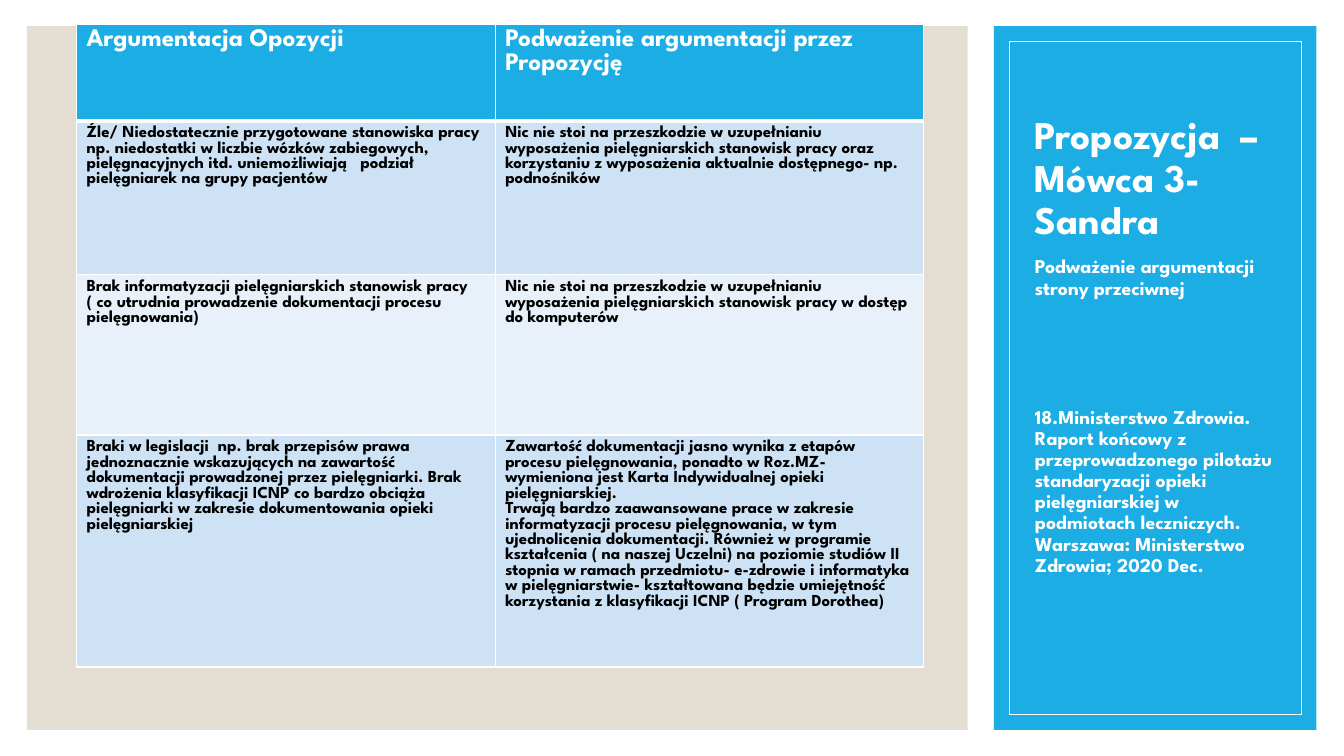
from pptx import Presentation
from pptx.dml.color import RGBColor
from pptx.enum import shapes, text
from pptx.oxml import parse_xml
from pptx.oxml import ns
from pptx.util import Pt


def tint(code):
    return RGBColor.from_string(code)


class Board:
    font = "League Spartan"
    white = "FFFFFF"
    blue = "1CADE4"
    sand = "E3DED1"
    bands = ("CDE3F5", "E8F1FA")

    def __init__(self, deck):
        self.slide = deck.slides.add_slide(deck.slide_layouts[6])

    def style(self, frame, size, color):
        for para in frame.paragraphs:
            for run in para.runs:
                run.font.name = self.font
                run.font.size = Pt(size)
                run.font.bold = True
                run.font.color.rgb = tint(color)

    def panel(self, box, fill=None, line=None):
        shape = self.slide.shapes.add_shape(
            shapes.MSO_SHAPE.RECTANGLE, *map(Pt, box))
        shape.shadow.inherit = False
        if fill:
            shape.fill.solid()
            shape.fill.fore_color.rgb = tint(fill)
        else:
            shape.fill.background()
        if line:
            shape.line.color.rgb = tint(line)
            shape.line.width = Pt(0.5)
        else:
            shape.line.fill.background()

    def label(self, box, words, size, anchor, gap=0):
        frame = self.slide.shapes.add_textbox(*map(Pt, box)).text_frame
        frame.word_wrap = True
        frame.vertical_anchor = anchor
        frame.text = words
        for para in frame.paragraphs:
            para.line_spacing = 0.9
        frame.paragraphs[-1].space_before = Pt(gap)
        self.style(frame, size, self.white)

    def edge(self, cell, side, width):
        line = parse_xml(
            f'<a:{side} {ns.nsdecls("a")} w="{Pt(width)}"><a:solidFill>'
            f'<a:srgbClr val="{self.white}"/></a:solidFill></a:{side}>')
        cell._tc.get_or_add_tcPr().append(line)

    def table(self, spot, widths, heights, rows):
        grid = self.slide.shapes.add_table(
            len(rows), len(widths), *map(Pt, spot),
            Pt(sum(widths)), Pt(sum(heights))).table
        for col, width in zip(grid.columns, widths):
            col.width = Pt(width)
        for i, (row, height) in enumerate(zip(rows, heights)):
            grid.rows[i].height = Pt(height)
            for j, words in enumerate(row):
                self.cell(grid.cell(i, j), words, i)

    def cell(self, cell, words, row):
        cell.text_frame.text = words
        self.style(cell.text_frame, 12 if row else 18,
                   "000000" if row else self.white)
        for side in ("lnL", "lnR", "lnT", "lnB"):
            thick = (row, side) in ((0, "lnB"), (1, "lnT"))
            self.edge(cell, side, 3 if thick else 1)
        cell.fill.solid()
        cell.fill.fore_color.rgb = tint(
            self.bands[(row - 1) % 2] if row else self.blue)


ROWS = [
    ("Argumentacja Opozycji", "Podważenie argumentacji przez Propozycję"),
    ("Źle/ Niedostatecznie przygotowane stanowiska pracy np. niedostatki w "
     "liczbie wózków zabiegowych, pielęgnacyjnych itd. uniemożliwiają   "
     "podział pielęgniarek na grupy pacjentów",
     "Nic nie stoi na przeszkodzie w uzupełnianiu wyposażenia "
     "pielęgniarskich stanowisk pracy oraz korzystaniu z wyposażenia "
     "aktualnie dostępnego- np. podnośników"),
    ("Brak informatyzacji pielęgniarskich stanowisk pracy ( co utrudnia "
     "prowadzenie dokumentacji procesu pielęgnowania)",
     "Nic nie stoi na przeszkodzie w uzupełnianiu wyposażenia "
     "pielęgniarskich stanowisk pracy w dostęp do komputerów"),
    ("Braki w legislacji  np. brak przepisów prawa jednoznacznie "
     "wskazujących na zawartość dokumentacji prowadzonej przez "
     "pielęgniarki. Brak wdrożenia klasyfikacji ICNP co bardzo obciąża "
     "pielęgniarki w zakresie dokumentowania opieki pielęgniarskiej",
     "Zawartość dokumentacji jasno wynika z etapów procesu pielęgnowania, "
     "ponadto w Roz.MZ- wymieniona jest Karta Indywidualnej opieki "
     "pielęgniarskiej.\nTrwają bardzo zaawansowane prace w zakresie "
     "informatyzacji procesu pielęgnowania, w tym ujednolicenia "
     "dokumentacji. Również w programie kształcenia ( na naszej Uczelni) "
     "na poziomie studiów II stopnia w ramach przedmiotu- e-zdrowie i "
     "informatyka w pielęgniarstwie- kształtowana będzie umiejętność "
     "korzystania z klasyfikacji ICNP ( Program Dorothea)"),
]
NOTES = (
    "Podważenie argumentacji strony przeciwnej\n"
    "18.Ministerstwo Zdrowia. Raport końcowy z przeprowadzonego pilotażu "
    "standaryzacji opieki pielęgniarskiej w podmiotach leczniczych. "
    "Warszawa: Ministerstwo Zdrowia; 2020 Dec.")


def main():
    deck = Presentation()
    deck.slide_width, deck.slide_height = Pt(960), Pt(540)
    board = Board(deck)
    board.panel((19.2, 18.7, 672, 502.6), fill=board.sand)
    board.panel((710, 18.7, 230.4, 502.6), fill=board.blue)
    board.panel((720.7, 29.5, 208.8, 481), line=board.white)
    top, low = text.MSO_ANCHOR.TOP, text.MSO_ANCHOR.BOTTOM
    board.label((732.2, 47.5, 191.5, 129.6),
                "Propozycja  – Mówca 3-Sandra", 28, low)
    board.label((732.2, 180, 191.5, 275.8), NOTES, 14, top, gap=77)
    board.table((54.7, 17.3), (299, 306), (69, 110, 114.5, 129), ROWS)
    deck.save("out.pptx")


if __name__ == "__main__":
    main()
